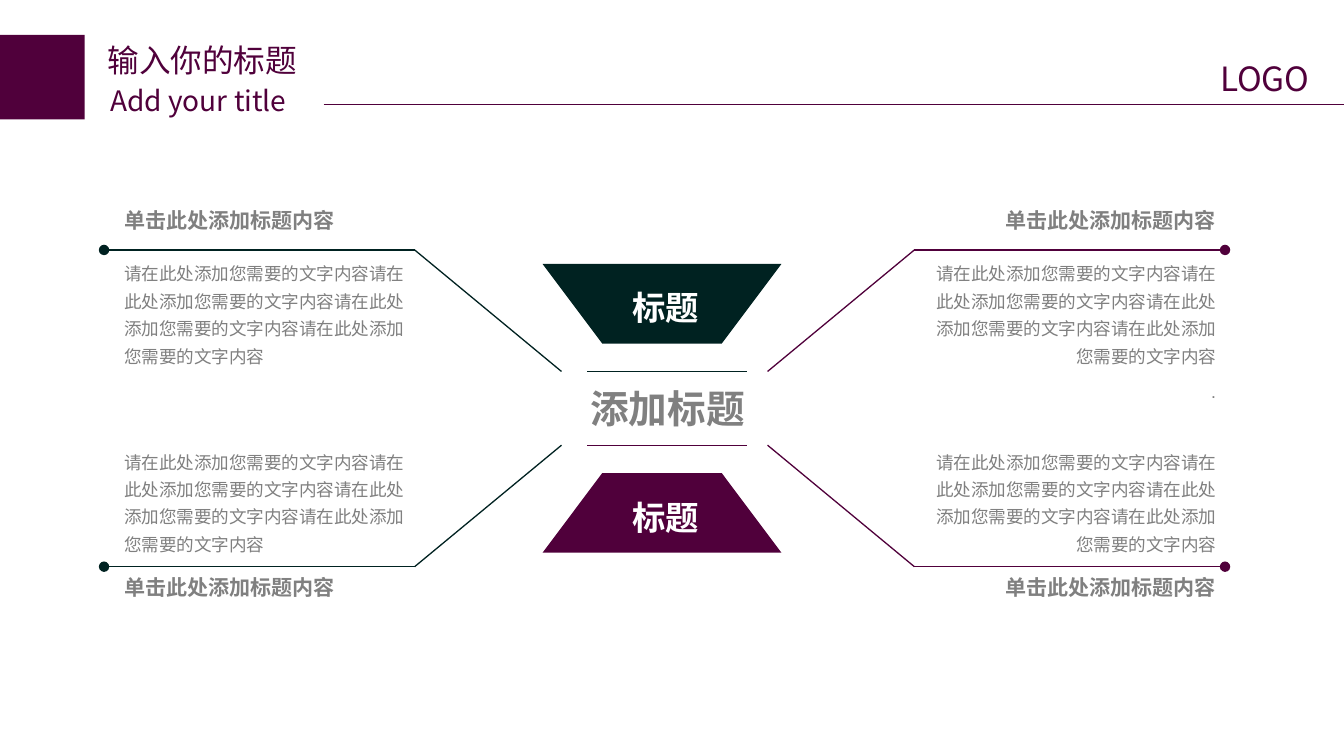
from dataclasses import dataclass

import lxml.etree
import pptx
import pptx.dml.color
import pptx.enum.shapes
import pptx.enum.text
import pptx.oxml.ns
import pptx.util

Cm = pptx.util.Cm
Pt = pptx.util.Pt
qn = pptx.oxml.ns.qn
Align = pptx.enum.text.PP_ALIGN


@dataclass(frozen=True)
class Theme:
    purple: str = "50003B"
    green: str = "002221"
    grey: str = "808080"
    white: str = "FFFFFF"
    latin: str = "Arial"
    cjk: str = "Noto Sans CJK SC"
    title: int = 18
    subtitle: int = 16
    badge: int = 19
    centre: int = 22
    heading: int = 12
    body: int = 10
    line: float = 0.75


THEME = Theme()
PAGE_W, PAGE_H = 27, 15
MID_X, MID_Y = 13.35, 8.2
HEADING = "单击此处添加标题内容"
BODY = "请在此处添加您需要的文字内容" * 4
WIDE_INSETS = (0.25, 0.13)
TIGHT_INSETS = (0.2, 0.1)


def rgb(value):
    return pptx.dml.color.RGBColor.from_string(value)


def apply(obj, values):
    for name, value in values.items():
        setattr(obj, name, value)


def write_text(sp, paragraphs, size, color, bold=False, font=THEME.latin,
               align=Align.LEFT, wrap=True, insets=TIGHT_INSETS, spacing=None):
    tf = sp.text_frame
    side, edge = map(Cm, insets)
    apply(tf, {"word_wrap": wrap,
               "auto_size": pptx.enum.text.MSO_AUTO_SIZE.NONE,
               "vertical_anchor": pptx.enum.text.MSO_ANCHOR.TOP,
               "margin_left": side, "margin_right": side,
               "margin_top": edge, "margin_bottom": edge})
    for i, text in enumerate(paragraphs):
        p = tf.add_paragraph() if i else tf.paragraphs[0]
        apply(p, {"alignment": align, "line_spacing": spacing,
                  "space_before": Pt(4.8 if i else 0)})
        r = p.add_run()
        r.text = text
        apply(r.font, {"name": font, "size": Pt(size), "bold": bold})
        r.font.color.rgb = rgb(color)
        ea = lxml.etree.SubElement(r._r.get_or_add_rPr(), qn("a:ea"))
        ea.set("typeface", THEME.cjk)


def add_text(s, box, paragraphs, size, color, **style):
    sp = s.shapes.add_textbox(*map(Cm, box))
    write_text(sp, paragraphs, size, color, **style)


def add_line(s, start, end, color, dot=False):
    kind = pptx.enum.shapes.MSO_CONNECTOR.STRAIGHT
    sp = s.shapes.add_connector(kind, *map(Cm, start + end))
    sp.line.color.rgb = rgb(color)
    sp.line.width = Pt(THEME.line)
    if dot:
        head = lxml.etree.SubElement(sp.line._get_or_add_ln(), qn("a:headEnd"))
        head.set("type", "oval")
    lxml.etree.SubElement(sp._element.spPr, qn("a:effectLst"))


def fill_plain(sp, color):
    sp.shadow.inherit = False
    sp.fill.solid()
    sp.fill.fore_color.rgb = rgb(color)
    sp.line.fill.background()


def add_header(s):
    block = s.shapes.add_shape(pptx.enum.shapes.MSO_SHAPE.RECTANGLE,
                               *map(Cm, (0, 0.7, 1.7, 1.7)))
    fill_plain(block, THEME.purple)
    style = {"color": THEME.purple, "font": THEME.cjk, "insets": WIDE_INSETS}
    title = s.shapes.title
    apply(title, dict(zip(("left", "top", "width", "height"),
                          map(Cm, (1.91, 0.7, 4.4, 1.03)))))
    write_text(title, ["输入你的标题"], THEME.title, **style)
    add_text(s, (1.97, 1.55, 4.4, 0.94), ["Add your title"], THEME.subtitle, **style)
    add_line(s, (6.5, 2.1), (PAGE_W, 2.1), THEME.purple)
    add_text(s, (24.26, 1.04, 2.44, 1.07), ["LOGO"], THEME.badge, wrap=False, **style)


def add_arm(s, side, level, color):
    """One branch: side is -1 left or 1 right, level is -1 upper or 1 lower."""
    tip, knee, inner = (MID_X + side * dx for dx in (11.26, 5.02, 2.07))
    far, near = (MID_Y + level * dy for dy in (3.18, 0.74))
    add_line(s, (tip, far), (knee, far), color, dot=True)
    add_line(s, (knee, far), (inner, near), color)


def add_notes_block(s, side, level):
    """Heading and body text that belong to one branch."""
    right = side > 0
    align = Align.RIGHT if right else Align.LEFT
    heading_y, body_y = (4.06, 5.06) if level < 0 else (11.44, 8.84)
    body = [BODY, "."] if right and level < 0 else [BODY]

    def box(top, width, height):
        return (24.63 - width if right else 2.3, top, width, height)

    add_text(s, box(heading_y, 7.14, 0.71), [HEADING], THEME.heading,
             THEME.grey, bold=True, align=align)
    add_text(s, box(body_y, 6.05, 3.12 if len(body) > 1 else 2.41), body,
             THEME.body, THEME.grey, align=align, spacing=1.3)


def add_trapezoid(s, level, color, label_y):
    x = 13.3
    near, far = MID_Y + level * 1.3, MID_Y + level * 2.9
    points = [(x - 2.4, far), (x - 1.2, near), (x + 1.2, near), (x + 2.4, far)]
    (x0, y0), *rest = [(Cm(px), Cm(py)) for px, py in points]
    fb = s.shapes.build_freeform(x0, y0)
    fb.add_line_segments(rest, close=True)
    fill_plain(fb.convert_to_shape(), color)
    add_text(s, (12.45, label_y, 1.85, 1.07), ["标题"], THEME.badge, THEME.white,
             bold=True, wrap=False, insets=WIDE_INSETS)


def main():
    prs = pptx.Presentation()
    apply(prs, {"slide_width": Cm(PAGE_W), "slide_height": Cm(PAGE_H)})
    s = prs.slides.add_slide(prs.slide_layouts[5])
    add_header(s)

    # Four branches with their texts
    for side, color in ((-1, THEME.green), (1, THEME.purple)):
        for level in (-1, 1):
            add_arm(s, side, level, color)
            add_notes_block(s, side, level)

    # Centre: title between two rules, with a trapezoid above and below
    for level, color, label_y in ((-1, THEME.green, 5.64), (1, THEME.purple, 9.86)):
        y = MID_Y + level * 0.74
        add_line(s, (11.8, y), (15, y), color)
        add_trapezoid(s, level, color, label_y)
    add_text(s, (11.66, 7.62, 3.5, 1.14), ["添加标题"], THEME.centre, THEME.grey,
             bold=True, align=Align.CENTER, wrap=False)

    prs.save("out.pptx")


if __name__ == "__main__":
    main()
